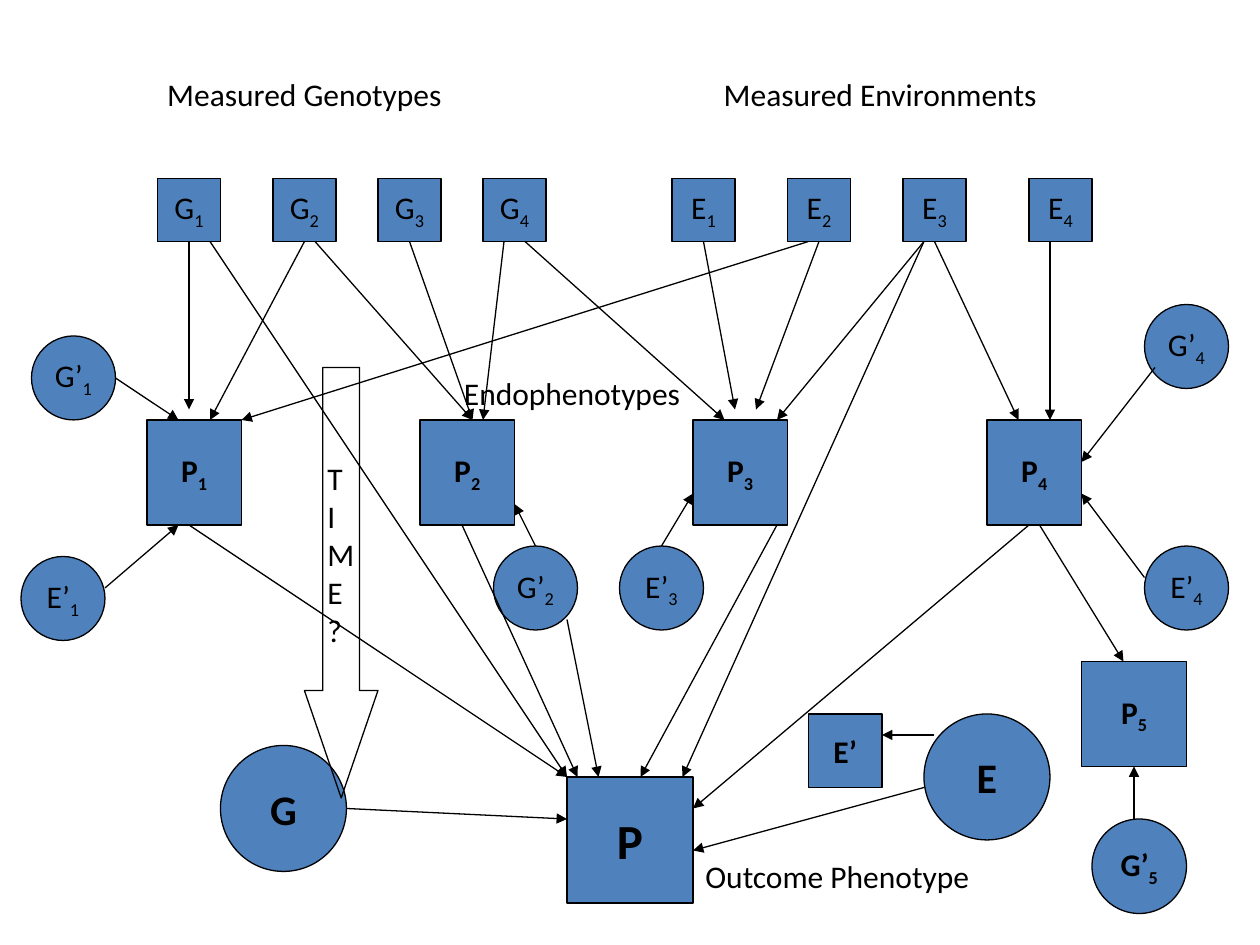
"""Draw a path diagram linking genotypes, environments and phenotypes."""
from dataclasses import dataclass

import pptx
import pptx.dml.color
import pptx.enum.shapes
import pptx.enum.text
import pptx.oxml
import pptx.util

PX = 9525
FONT = "Calibri"
BLACK = pptx.dml.color.RGBColor(0x00, 0x00, 0x00)
BLUE = pptx.dml.color.RGBColor(0x4F, 0x81, 0xBD)
SHAPE = pptx.enum.shapes.MSO_SHAPE
SQUARE, CIRCLE = SHAPE.RECTANGLE, SHAPE.OVAL
DRAWING = 'xmlns:a="http://schemas.openxmlformats.org/drawingml/2006/main"'


@dataclass
class Node:
    name: str
    index: str
    left: int
    top: int
    width: int
    height: int
    kind: int = SQUARE
    size: int = 18
    bold: bool = False


@dataclass
class Arrow:
    x1: int
    y1: int
    x2: int
    y2: int


@dataclass
class Label:
    lines: tuple
    left: int
    top: int
    width: int
    height: int = 38
    wrap: bool = True
    inset: int = 5


GENES = [Node("G", str(i), x, 136, 48, 48) for i, x in enumerate((120, 208, 288, 368), 1)]
ENVIRONMENTS = [Node("E", str(i), x, 136, 48, 48) for i, x in enumerate((512, 600, 688, 784), 1)]
ENDOPHENOTYPES = [Node("P", str(i), x, 320, 72, 80, bold=True)
                  for i, x in enumerate((112, 320, 528, 752), 1)]
RESIDUALS = [Node(name, index, x, y, 64, 64, CIRCLE) for name, index, x, y in (
    ("G’", "1", 24, 256), ("E’", "1", 16, 424), ("G’", "2", 376, 416),
    ("E’", "3", 472, 416), ("G’", "4", 872, 232), ("E’", "4", 872, 416))]
OUTCOMES = [
    Node("P", "", 432, 592, 96, 96, size=28, bold=True),
    Node("G", "", 168, 568, 96, 96, CIRCLE, 24, True),
    Node("E", "", 704, 544, 96, 96, CIRCLE, 24, True),
    Node("E’", "", 616, 544, 56, 56, bold=True),
    Node("P", "5", 824, 504, 80, 80, bold=True),
    Node("G’", "5", 832, 624, 72, 72, CIRCLE, bold=True),
]
NODES = GENES + ENVIRONMENTS + ENDOPHENOTYPES + RESIDUALS + OUTCOMES

MEASURED_PATHS = [Arrow(x1, 184, x2, y2) for x1, x2, y2 in (
    (144, 144, 312), (160, 432, 592), (232, 160, 320), (240, 360, 320),
    (312, 360, 320), (384, 368, 320), (400, 552, 320), (536, 560, 312),
    (616, 184, 320), (624, 576, 312), (704, 592, 320), (704, 520, 592),
    (712, 776, 320), (800, 800, 320))]
PHENOTYPE_PATHS = [Arrow(x1, 400, x2, y2) for x1, x2, y2 in (
    (144, 432, 592), (352, 440, 592), (592, 488, 592), (784, 528, 616), (792, 856, 504))]
RESIDUAL_PATHS = [
    Arrow(88, 288, 136, 320), Arrow(80, 448, 136, 400),
    Arrow(408, 416, 392, 384), Arrow(432, 472, 456, 592),
    Arrow(504, 416, 528, 376), Arrow(880, 280, 824, 352),
    Arrow(872, 440, 824, 376), Arrow(864, 624, 864, 584),
    Arrow(264, 616, 432, 624), Arrow(704, 600, 528, 648),
    Arrow(712, 560, 672, 560),
]
ARROWS = MEASURED_PATHS + PHENOTYPE_PATHS + RESIDUAL_PATHS

LABELS = [
    Label(("Measured Genotypes",), 118, 52, 249, wrap=False),
    Label(("Measured Environments",), 542, 52, 279, wrap=False),
    Label(("Outcome Phenotype",), 528, 648, 276),
    Label(("Endophenotypes",), 344, 280, 208),
    Label(("T", "I", "ME", "?"), 240, 316, 34, 182, inset=34),
]


def scaled(*lengths: int) -> list:
    """Turn px lengths into EMU."""
    return [pptx.util.Emu(length * PX) for length in lengths]


def style_font(font, size: int, bold: bool = False) -> None:
    """Apply the common typeface and colour."""
    font.name, font.size, font.bold = FONT, pptx.util.Pt(size), bold
    font.color.rgb = BLACK


def outline(shape) -> None:
    """Give a shape or connector the thin black line."""
    shape.line.color.rgb = BLACK
    shape.line.width = pptx.util.Pt(0.75)


def draw_node(page, node: Node):
    """Draw a lettered square or circle with its subscript."""
    box = page.shapes.add_shape(
        node.kind, *scaled(node.left, node.top, node.width, node.height))
    box.shadow.inherit = False
    box.fill.solid()
    box.fill.fore_color.rgb = BLUE
    outline(box)
    box.text_frame.word_wrap = False
    box.text_frame.vertical_anchor = pptx.enum.text.MSO_ANCHOR.MIDDLE
    para = box.text_frame.paragraphs[0]
    para.alignment = pptx.enum.text.PP_ALIGN.CENTER
    style_font(para.font, node.size, node.bold)
    para.add_run().text = node.name
    if node.index:
        span = para.add_run()
        span.text = node.index
        span.font._element.set("baseline", "-25000")
    return box


def side_middles(node: Node) -> list:
    """List the side middles in connection order: top, left, bottom, right."""
    middle, centre = node.left + node.width // 2, node.top + node.height // 2
    return [(middle, node.top), (node.left, centre),
            (middle, node.top + node.height), (node.left + node.width, centre)]


def draw_arrow(page, arrow: Arrow, sites: dict) -> None:
    """Draw an arrow, joined to squares where it meets a side's middle."""
    line = page.shapes.add_connector(
        pptx.enum.shapes.MSO_CONNECTOR.STRAIGHT,
        *scaled(arrow.x1, arrow.y1, arrow.x2, arrow.y2))
    outline(line)
    line.line._get_or_add_ln().append(
        pptx.oxml.parse_xml(f'<a:tailEnd {DRAWING} type="triangle"/>'))
    line._element.spPr.append(pptx.oxml.parse_xml(f"<a:effectLst {DRAWING}/>"))
    if (arrow.x1, arrow.y1) in sites:
        line.begin_connect(*sites[arrow.x1, arrow.y1])
    if (arrow.x2, arrow.y2) in sites:
        line.end_connect(*sites[arrow.x2, arrow.y2])


def draw_label(page, label: Label) -> None:
    """Draw a free caption, one paragraph a line."""
    box = page.shapes.add_textbox(
        *scaled(label.left, label.top, label.width, label.height))
    frame = box.text_frame
    frame.word_wrap = label.wrap
    frame.margin_top = scaled(label.inset)[0]
    frame.text = "\n".join(label.lines)
    for para in frame.paragraphs:
        style_font(para.font, 18)


def draw_time_arrow(page) -> None:
    """Draw the hollow arrow of time."""
    arrow = page.shapes.add_shape(SHAPE.DOWN_ARROW, *scaled(232, 280, 56, 328))
    arrow.adjustments[1] = 1.46
    arrow.shadow.inherit = False
    arrow.fill.background()
    outline(arrow)


def main() -> None:
    """Build and save the deck."""
    deck = pptx.Presentation()
    deck.slide_width, deck.slide_height = scaled(960, 720)
    page = deck.slides.add_slide(deck.slide_layouts[6])
    sites = {}
    for node in NODES:
        box = draw_node(page, node)
        if node.kind == SQUARE:
            for site, point in enumerate(side_middles(node)):
                sites[point] = (box, site)
    for arrow in ARROWS:
        draw_arrow(page, arrow, sites)
    draw_time_arrow(page)
    for label in LABELS:
        draw_label(page, label)
    deck.save("out.pptx")


if __name__ == "__main__":
    main()
